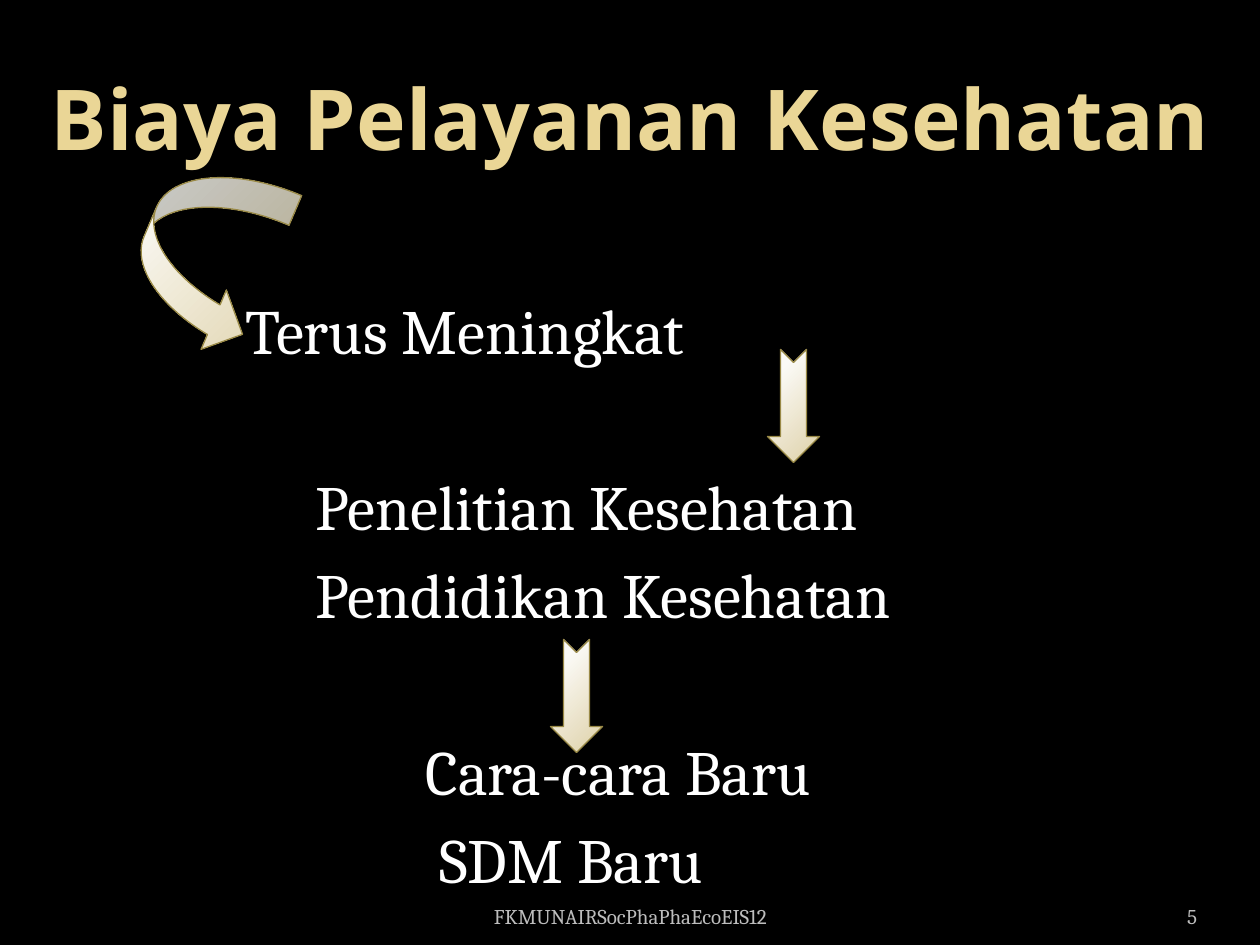
"""Build the slide on the rising cost of health care."""
from lxml import etree
from pptx import Presentation
from pptx import util as u
from pptx.dml.color import RGBColor
from pptx.enum import shapes, text
from pptx.oxml.ns import qn

BLACK = RGBColor(0x00, 0x00, 0x00)
WHITE = RGBColor(0xFF, 0xFF, 0xFF)
GOLD = RGBColor(0xEA, 0xD6, 0x96)
GREY = RGBColor(0xBD, 0xBD, 0xBD)
CREAM = RGBColor(0xFB, 0xFA, 0xF6)
SAND = RGBColor(0xDE, 0xD1, 0xA8)
OLIVE = RGBColor(0x99, 0x89, 0x46)
LEFT, CENTER, RIGHT = text.PP_ALIGN.LEFT, text.PP_ALIGN.CENTER, text.PP_ALIGN.RIGHT


def px(length):
    return u.Emu(round(length * 914400 / 126))


def write(paragraph, words, color, alignment, **font_format):
    paragraph.alignment = alignment
    run = paragraph.add_run()
    run.text = words
    run.font.color.rgb = color
    for name, value in font_format.items():
        setattr(run.font, name, value)


presentation = Presentation()
presentation.slide_width, presentation.slide_height = px(1260), px(945)
slide = presentation.slides.add_slide(presentation.slide_layouts[5])
slide.background.fill.solid()
slide.background.fill.fore_color.rgb = BLACK

title = slide.shapes.title
title.left, title.top, title.width, title.height = px(0), px(38), px(1260), px(157)
title.text_frame.vertical_anchor = text.MSO_ANCHOR.MIDDLE
write(title.text_frame.paragraphs[0], "Biaya Pelayanan Kesehatan", GOLD, CENTER,
      name="Noto Sans", size=u.Pt(48), bold=True)

body = slide.shapes.add_textbox(px(63), px(285), px(1134), px(611)).text_frame
body.word_wrap = True
LINES = [
    ("Terus Meningkat", 170, 0),
    ("Penelitian Kesehatan", 240, 57.6),
    ("Pendidikan Kesehatan", 240, 7.2),
    ("Cara-cara Baru", 350, 57.6),
    ("SDM Baru", 364, 7.2),
]
for index, (words, indent, gap) in enumerate(LINES):
    paragraph = body.add_paragraph() if index else body.paragraphs[0]
    paragraph.space_before = u.Pt(gap)
    write(paragraph, words, WHITE, LEFT, name="Cambria", size=u.Pt(36))
    paragraph._p.get_or_add_pPr().set("marL", str(px(indent)))

FOOTERS = [
    ("FKMUNAIRSocPhaPhaEcoEIS12", 431, 399, CENTER, 13),
    ("5", 1092, 105, RIGHT, 0),
]
for words, left, width, alignment, margin in FOOTERS:
    frame = slide.shapes.add_textbox(px(left), px(885), px(width), px(50)).text_frame
    frame.word_wrap = True
    frame.vertical_anchor = text.MSO_ANCHOR.BOTTOM
    frame.margin_left = frame.margin_right = px(margin)
    write(frame.paragraphs[0], words, GREY, alignment, name="Cambria", size=u.Pt(12))

CURVED = shapes.MSO_SHAPE.CURVED_RIGHT_ARROW
NOTCHED = shapes.MSO_SHAPE.NOTCHED_RIGHT_ARROW
ARROWS = [
    (CURVED, 142, 163, 129, 183, 23.1),
    (NOTCHED, 737, 380, 113, 52, 90),
    (NOTCHED, 520, 670, 113, 52, 90),
]
for kind, left, top, width, height, rotation in ARROWS:
    arrow = slide.shapes.add_shape(kind, px(left), px(top), px(width), px(height))
    arrow.rotation = rotation
    arrow.shadow.inherit = False
    arrow.line.color.rgb = OLIVE
    arrow.line.width = u.Pt(0.75)
    arrow.fill.gradient()
    for stop, color, position in zip(arrow.fill.gradient_stops, (CREAM, SAND), (0.2, 1)):
        stop.color.rgb = color
        stop.position = position
    gradient = arrow._element.spPr.find(qn("a:gradFill"))
    gradient.remove(gradient.find(qn("a:lin")))
    circle = etree.SubElement(gradient, qn("a:path"), path="circle")
    etree.SubElement(circle, qn("a:fillToRect"),
                     l="-15000", t="-15000", r="115000", b="115000")

presentation.save("out.pptx")
